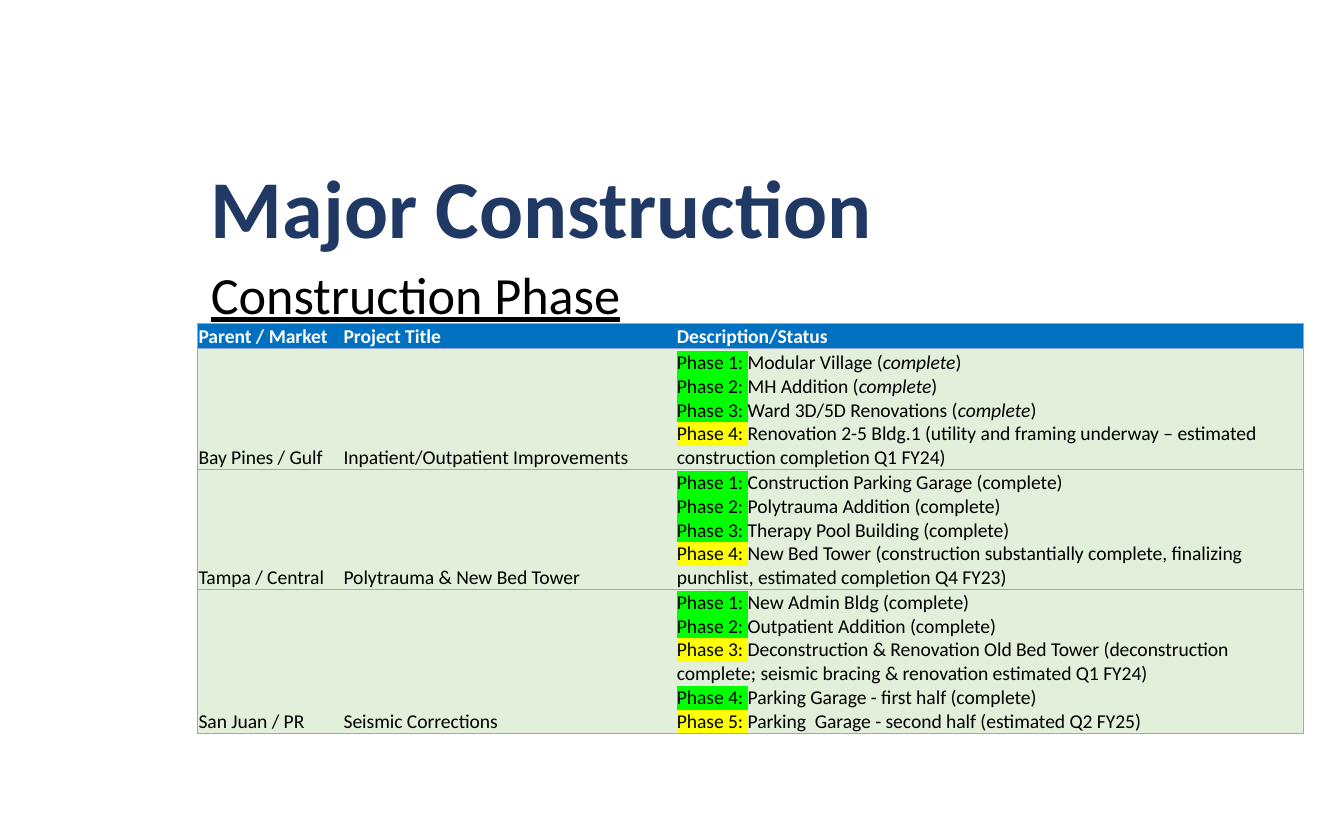
"""Build the Major Construction status slide."""
from pptx import Presentation
from pptx.dml.color import RGBColor as Rgb
from pptx.enum.text import MSO_ANCHOR as Anchor, MSO_AUTO_SIZE as Fit, PP_ALIGN as Align
from pptx.oxml.ns import qn
from pptx.util import Pt
from lxml.etree import SubElement as Sub

HUES = {"navy": "203864", "black": "000000", "white": "FFFFFF", "head": "0070C0",
        "cell": "E2EFDA", "line": "8EA9DB", "done": "00FF00", "open": "FFFF00"}
HEADS = ["Parent / Market", "Project Title", "Description/Status"]
JOBS = [
    ("Bay Pines / Gulf", "Inpatient/Outpatient Improvements", [
        ("done", "Modular Village (*complete*)"),
        ("done", "MH Addition (*complete*)"),
        ("done", "Ward 3D/5D Renovations (*complete*)"),
        ("open", "Renovation 2-5 Bldg.1 (utility and framing underway – "
                 "estimated construction completion Q1 FY24)")]),
    ("Tampa / Central", "Polytrauma & New Bed Tower", [
        ("done", "Construction Parking Garage (complete)"),
        ("done", "Polytrauma Addition (complete)"),
        ("done", "Therapy Pool Building (complete)"),
        ("open", "New Bed Tower (construction substantially complete, finalizing "
                 "punchlist, estimated completion Q4 FY23)")]),
    ("San Juan / PR", "Seismic Corrections", [
        ("done", "New Admin Bldg (complete)"),
        ("done", "Outpatient Addition (complete)"),
        ("open", "Deconstruction & Renovation Old Bed Tower (deconstruction complete; "
                 "seismic bracing & renovation estimated Q1 FY24)"),
        ("done", "Parking Garage - first half (complete)"),
        ("open", "Parking  Garage - second half (estimated Q2 FY25)")]),
]
COLS = [77.75, 178.5, 336.25]
ROWS = [13, 64.8, 63.5, 75.75]


class Deck:
    """Hold the style and the current slide."""

    face = "Calibri"

    def __init__(self, prs):
        self.slide = prs.slides.add_slide(prs.slide_layouts[1])

    def style(self, para, size, hue, bold=False, line=False):
        font = para.font
        font.name, font.size, font.bold, font.underline = self.face, Pt(size), bold, line
        font.color.rgb = Rgb.from_string(HUES[hue])

    def holder(self, index, text, box, anchor, size, hue, **kind):
        shape = self.slide.placeholders[index]
        shape.left, shape.top, shape.width, shape.height = map(Pt, box)
        frame = shape.text_frame
        frame.text, frame.auto_size, frame.vertical_anchor = text, Fit.NONE, anchor
        para = frame.paragraphs[0]
        props = para._p.get_or_add_pPr()
        props.set("marL", "0")
        props.set("indent", "0")
        Sub(props, qn("a:buNone"))
        para.alignment, para.line_spacing, para.space_before = Align.LEFT, 0.9, Pt(0)
        self.style(para, size, hue, **kind)

    def edges(self, cell, sides):
        props = cell._tc.get_or_add_tcPr()
        for side in "LRTB":
            line = Sub(props, qn("a:ln" + side), w=str(Pt(0.5)))
            if side in sides:
                fill = Sub(line, qn("a:solidFill"))
                Sub(fill, qn("a:srgbClr"), val=HUES["line"])
            else:
                Sub(line, qn("a:noFill"))

    def phases(self, para, steps):
        for num, (state, text) in enumerate(steps, 1):
            if num > 1:
                para.add_line_break()
            label = para.add_run()
            label.text = f"Phase {num}: "
            mark = Sub(label._r.get_or_add_rPr(), qn("a:highlight"))
            Sub(mark, qn("a:srgbClr"), val=HUES[state])
            for part, words in enumerate(text.split("*")):
                run = para.add_run()
                run.text = words
                if part % 2:
                    run.font.italic = True

    def cell(self, cell, item, head, sides):
        self.edges(cell, sides)
        cell.fill.solid()
        cell.fill.fore_color.rgb = Rgb.from_string(HUES["head" if head else "cell"])
        cell.margin_left = cell.margin_right = cell.margin_top = Pt(0.6)
        cell.margin_bottom = 0
        cell.vertical_anchor = Anchor.BOTTOM
        para = cell.text_frame.paragraphs[0]
        if isinstance(item, str):
            para.add_run().text = item
        else:
            self.phases(para, item)
        self.style(para, 10.5, "white" if head else "black", bold=head)

    def table(self, left, top, data):
        grid = self.slide.shapes.add_table(len(ROWS), len(COLS), Pt(left), Pt(top),
                                           Pt(sum(COLS)), Pt(sum(ROWS))).table
        grid.first_row = grid.horz_banding = False
        for col, wide in zip(grid.columns, COLS):
            col.width = Pt(wide)
        for row, high in zip(grid.rows, ROWS):
            row.height = Pt(high)
        ends = ["LTB", "TB", "RTB"]
        for y, items in enumerate(data):
            for x, item in enumerate(items):
                self.cell(grid.cell(y, x), item, y == 0, ends[x])


def main():
    prs = Presentation()
    prs.slide_width, prs.slide_height = Pt(720), Pt(450)
    deck = Deck(prs)
    deck.holder(0, "Major Construction", (105.75, 70, 565, 87), Anchor.MIDDLE,
                44, "navy", bold=True)
    deck.holder(1, "Construction Phase", (105.75, 140.5, 565, 242), Anchor.TOP,
                28, "black", line=True)
    deck.table(105.75, 173.5, [HEADS, *JOBS])
    prs.save("out.pptx")


if __name__ == "__main__":
    main()
